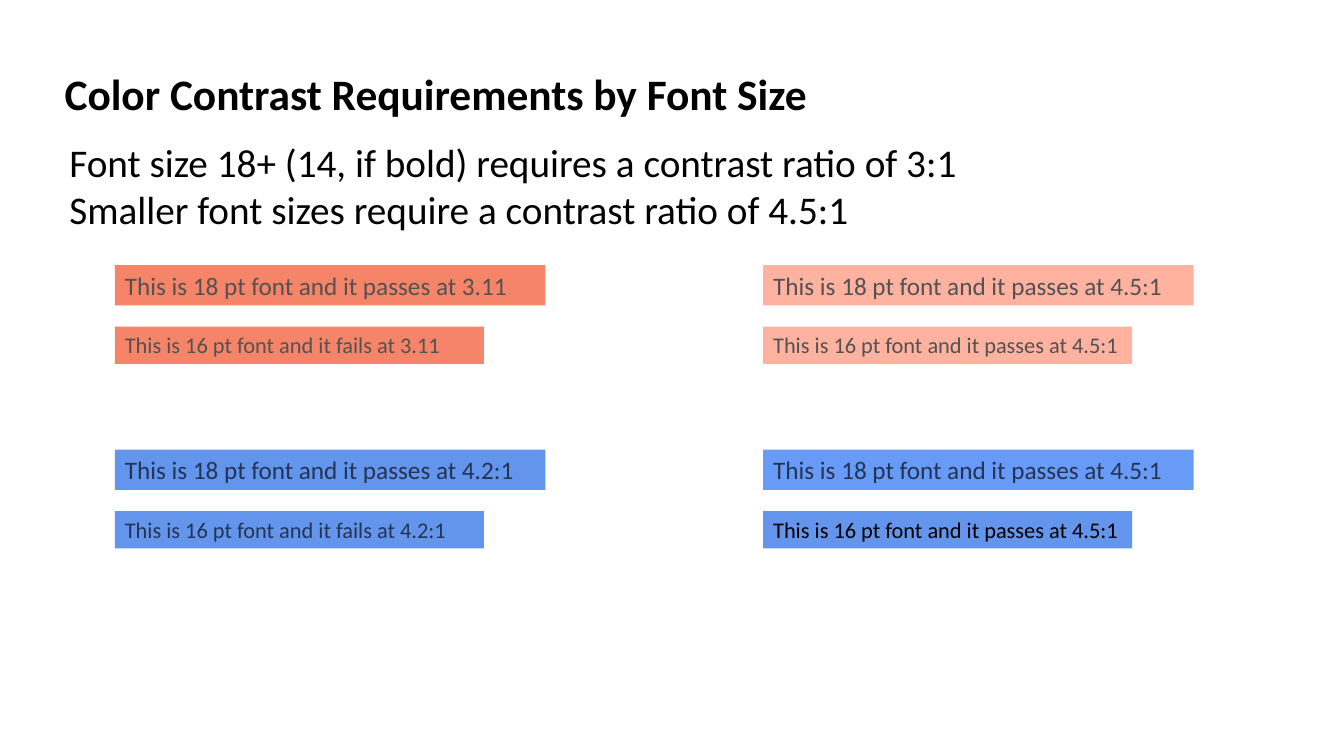
from dataclasses import dataclass

from pptx import Presentation
from pptx import util as u
from pptx.dml.color import RGBColor
from pptx.enum import shapes, text

PX = 9144
FONT = "Calibri"
BLACK = "000000"
GRAY = "525252"
NAVY = "233454"
CORAL = "F58468"
PINK = "FFB29F"
BLUE = "6495ED"
BRIGHT_BLUE = "689BF7"

COLUMN_LEFTS = (114, 757)
GROUP_TOPS = (263, 446)


@dataclass(frozen=True)
class Bar:
    """Size and place of a sample bar within its group."""
    points: int
    offset: int
    width: int
    height: int


@dataclass(frozen=True)
class Sample:
    """One contrast sample: grid cell, bar, result and colours."""
    column: int
    group: int
    bar: Bar
    result: str
    fill: str
    ink: str


LARGE = Bar(18, 0, 427, 40)
SMALL = Bar(16, 61, 366, 37)

SAMPLES = (
    Sample(0, 0, LARGE, "passes at 3.11", CORAL, GRAY),
    Sample(0, 0, SMALL, "fails at 3.11", CORAL, GRAY),
    Sample(1, 0, LARGE, "passes at 4.5:1", PINK, GRAY),
    Sample(1, 0, SMALL, "passes at 4.5:1", PINK, GRAY),
    Sample(0, 1, LARGE, "passes at 4.2:1", BLUE, NAVY),
    Sample(0, 1, SMALL, "fails at 4.2:1", BLUE, NAVY),
    Sample(1, 1, LARGE, "passes at 4.5:1", BRIGHT_BLUE, NAVY),
    Sample(1, 1, SMALL, "passes at 4.5:1", BLUE, BLACK),
)

RULES = (
    "Font size 18+ (14, if bold) requires a contrast ratio of 3:1",
    "Smaller font sizes require a contrast ratio of 4.5:1",
)


def px(*lengths: int) -> list[u.Emu]:
    """Turn px lengths into EMU."""
    return [u.Emu(length * PX) for length in lengths]


def paint(color_format, color: str) -> None:
    """Set a colour from a hex string."""
    color_format.rgb = RGBColor.from_string(color)


def style_text(frame, points: int, color: str, bold: bool = False) -> None:
    """Format every run of a text frame, aligned left."""
    frame.word_wrap = True
    for para in frame.paragraphs:
        para.alignment = text.PP_ALIGN.LEFT
        for span in para.runs:
            span.font.name = FONT
            span.font.size = u.Pt(points)
            span.font.bold = bold
            paint(span.font.color, color)


def set_title(page) -> None:
    """Place and format the title placeholder."""
    title = page.shapes.title
    title.left, title.top, title.width, title.height = px(54, 43, 837, 81)
    frame = title.text_frame
    frame.text = "Color Contrast Requirements by Font Size"
    frame.auto_size = text.MSO_AUTO_SIZE.NONE
    frame.vertical_anchor = text.MSO_ANCHOR.BOTTOM
    frame.paragraphs[0].line_spacing = 0.9
    style_text(frame, 31, BLACK, bold=True)


def add_sample(page, sample: Sample) -> None:
    """Draw one filled bar with its caption."""
    bar = sample.bar
    left = COLUMN_LEFTS[sample.column]
    top = GROUP_TOPS[sample.group] + bar.offset
    box = page.shapes.add_shape(
        shapes.MSO_SHAPE.RECTANGLE, *px(left, top, bar.width, bar.height)
    )
    box.shadow.inherit = False
    box.fill.solid()
    paint(box.fill.fore_color, sample.fill)
    box.line.fill.background()
    frame = box.text_frame
    frame.text = f"This is {bar.points} pt font and it {sample.result}"
    frame.vertical_anchor = text.MSO_ANCHOR.TOP
    frame.auto_size = text.MSO_AUTO_SIZE.SHAPE_TO_FIT_TEXT
    style_text(frame, bar.points, sample.ink)


def add_rules(page) -> None:
    """Write the two contrast rules under the title."""
    box = page.shapes.add_textbox(*px(59, 132, 964, 151))
    box.text_frame.text = "\n".join(RULES)
    style_text(box.text_frame, 28, BLACK)


def main() -> None:
    """Build the slide and save it."""
    deck = Presentation()
    deck.slide_width, deck.slide_height = px(1333, 750)
    page = deck.slides.add_slide(deck.slide_layouts.get_by_name("Title Only"))
    set_title(page)
    for sample in SAMPLES:
        add_sample(page, sample)
    add_rules(page)
    deck.save("out.pptx")


if __name__ == "__main__":
    main()
